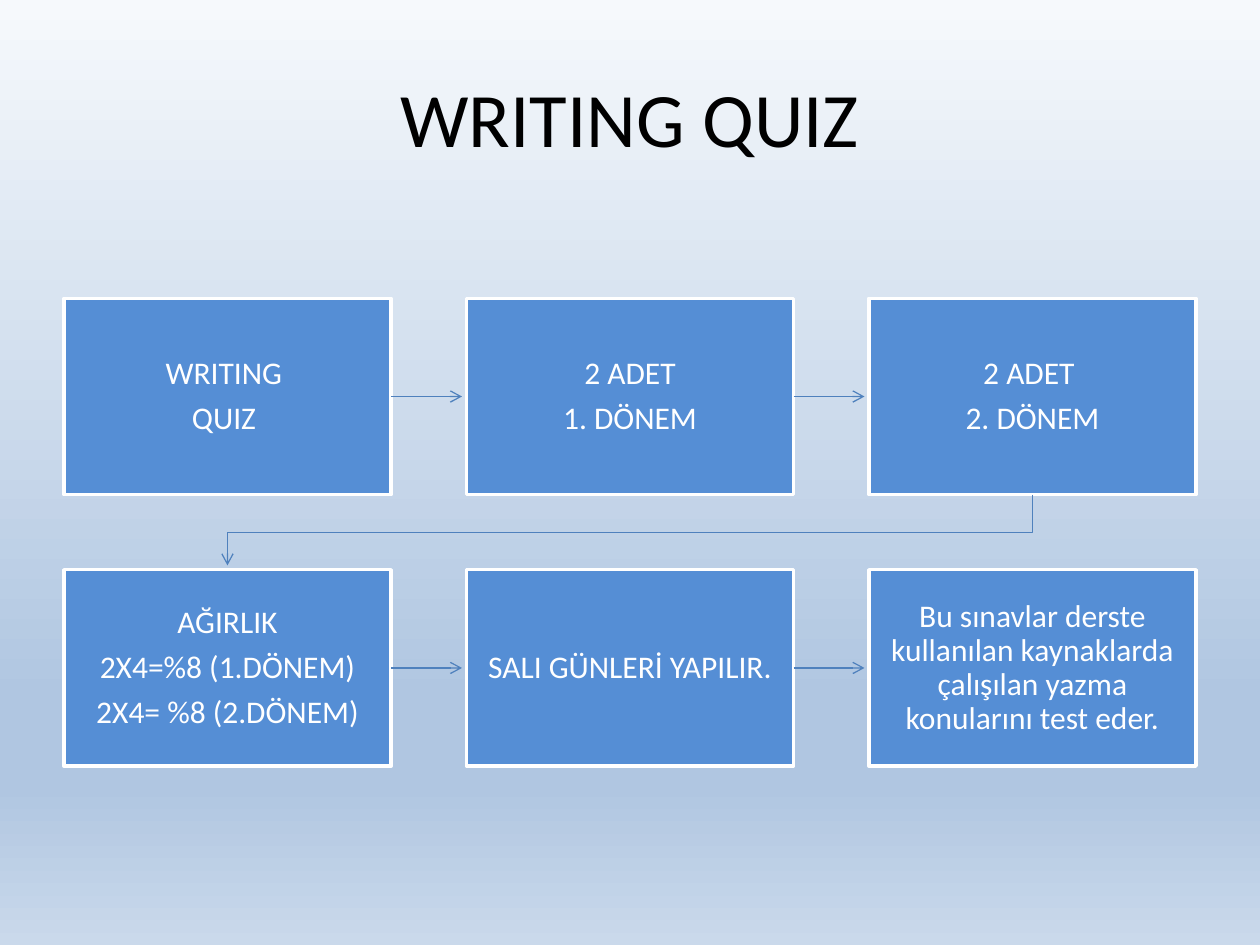
"""Build the WRITING QUIZ slide: six linked boxes in two rows."""
from copy import deepcopy
from dataclasses import dataclass

from lxml import etree
from pptx import Presentation
from pptx import util as u
from pptx.dml import color
from pptx.enum import shapes, text
from pptx.oxml import ns


@dataclass(frozen=True)
class Theme:
    font: str = "Calibri"
    title_size: float = 44
    box_size: float = 18
    title: str = "000000"
    box_text: str = "FFFFFF"
    box_fill: str = "558ED5"
    box_line: str = "FFFFFF"
    arrow: str = "4F81BD"
    background: tuple = ((0, "F6F9FC"), (0.74, "B0C6E1"), (0.83, "B0C6E1"), (1, "CAD9EB"))


theme = Theme()


def write(shape, lines, size, rgb, inset, paragraph_format):
    frame = shape.text_frame
    margins = {f"margin_{side}": u.Pt(inset) for side in ("left", "top", "right", "bottom")}
    frame_format = {"word_wrap": True, "vertical_anchor": text.MSO_ANCHOR.MIDDLE, **margins}
    for name, value in frame_format.items():
        setattr(frame, name, value)
    for index, line in enumerate(lines):
        paragraph = frame.paragraphs[0] if index == 0 else frame.add_paragraph()
        for name, value in paragraph_format.items():
            setattr(paragraph, name, value)
        run = paragraph.add_run()
        run.text = line
        for name, value in {"name": theme.font, "size": u.Pt(size)}.items():
            setattr(run.font, name, value)
        run.font.color.rgb = color.RGBColor.from_string(rgb)


def style_arrow(shape):
    shape.line.color.rgb = color.RGBColor.from_string(theme.arrow)
    shape.line.width = u.Pt(0.75)
    properties = shape.element.spPr
    etree.SubElement(properties.find(ns.qn("a:ln")), ns.qn("a:tailEnd"), type="arrow")
    if properties.find(ns.qn("a:effectLst")) is None:
        etree.SubElement(properties, ns.qn("a:effectLst"))


presentation = Presentation()
presentation.slide_width, presentation.slide_height = u.Pt(720), u.Pt(540)
slide = presentation.slides.add_slide(presentation.slide_layouts[6])

fill = slide.background.fill
fill.gradient()
fill.gradient_angle = 270
stop_list = next(slide.element.iter(ns.qn("a:gsLst")))
for _ in range(len(theme.background) - len(stop_list)):
    stop_list.append(deepcopy(stop_list[0]))
for stop, (position, rgb) in zip(fill.gradient_stops, theme.background):
    stop.position = position
    stop.color.rgb = color.RGBColor.from_string(rgb)

title = slide.shapes.add_textbox(u.Pt(36), u.Pt(21.6), u.Pt(648), u.Pt(90))
write(title, ["WRITING QUIZ"], theme.title_size, theme.title, 4,
      {"alignment": text.PP_ALIGN.CENTER})

steps = [
    ["WRITING ", "QUIZ "],
    ["2 ADET", "1. DÖNEM"],
    ["2 ADET ", "2. DÖNEM"],
    ["AĞIRLIK", "2X4=%8 (1.DÖNEM)", "2X4= %8 (2.DÖNEM)"],
    ["SALI GÜNLERİ YAPILIR."],
    ["Bu sınavlar derste kullanılan kaynaklarda çalışılan yazma konularını test eder."],
]
columns, left, top = 3, 36.5, 170.5
width, height, step_x, step_y = 187, 112.2, 230, 155.1
arrow_gap = 2.5
box_paragraph = {"alignment": text.PP_ALIGN.CENTER, "line_spacing": 0.9,
                 "space_after": u.Pt(6.3)}

boxes = []
for index, lines in enumerate(steps):
    row, column = divmod(index, columns)
    box = slide.shapes.add_shape(
        shapes.MSO_SHAPE.RECTANGLE, u.Pt(left + column * step_x), u.Pt(top + row * step_y),
        u.Pt(width), u.Pt(height))
    box.shadow.inherit = False
    box.fill.solid()
    box.fill.fore_color.rgb = color.RGBColor.from_string(theme.box_fill)
    box.line.color.rgb = color.RGBColor.from_string(theme.box_line)
    box.line.width = u.Pt(2)
    write(box, lines, theme.box_size, theme.box_text, 10, box_paragraph)
    boxes.append(box)

for index, (box, following) in enumerate(zip(boxes, boxes[1:])):
    if (index + 1) % columns:
        middle = box.top + box.height // 2
        arrow = slide.shapes.add_connector(
            shapes.MSO_CONNECTOR.STRAIGHT, box.left + box.width, middle,
            following.left - u.Pt(arrow_gap), middle)
        arrow.begin_connect(box, 3)
    else:
        start_x, end_x = (item.left + item.width // 2 for item in (box, following))
        bottom = box.top + box.height
        turn = (bottom + following.top) // 2
        builder = slide.shapes.build_freeform(start_x, bottom)
        builder.add_line_segments(
            [(start_x, turn), (end_x, turn), (end_x, following.top - u.Pt(arrow_gap))],
            close=False)
        arrow = builder.convert_to_shape()
        arrow.fill.background()
    style_arrow(arrow)

presentation.save("out.pptx")
